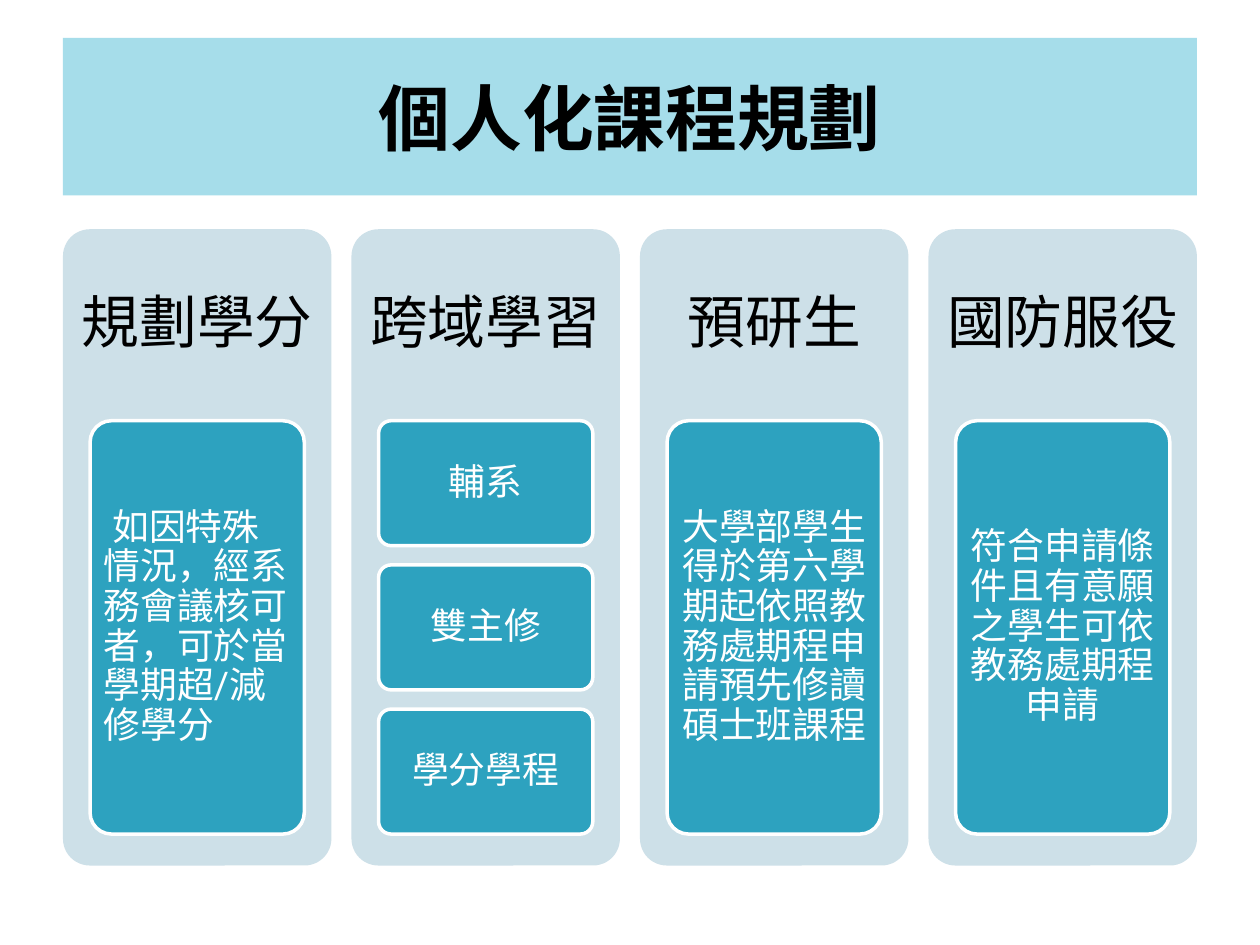
import pptx
import pptx.util
import pptx.dml.color
import pptx.enum.shapes
import pptx.enum.text

Pt = pptx.util.Pt
KIND = pptx.enum.shapes.MSO_SHAPE
ALIGN = pptx.enum.text.PP_ALIGN

LEFT, WIDE = 36, 648
TOP, HIGH = 131, 363.6
COL_W = 153.4
HEAD_H = 109.4
CARD_W, CARD_H = 122.4, 236.2
GAP = 11

COLS = [
    ("規劃學分", ["如因特殊情況，經系務會議核可者，可於當學期超/減修學分"]),
    ("跨域學習", ["輔系", "雙主修", "學分學程"]),
    ("預研生", ["大學部學生得於第六學期起依照教務處期程申請預先修讀碩士班課程"]),
    ("國防服役", ["符合申請條件且有意願之學生可依教務處期程申請"]),
]


def color(code):
    """Turn a hex string into a colour."""
    return pptx.dml.color.RGBColor.from_string(code)


def add_box(slide, kind, area, fill, line=None):
    """Add a filled shape, with an outline if a line colour is given."""
    box = slide.shapes.add_shape(kind, *map(Pt, area))
    box.shadow.inherit = False
    box.fill.solid()
    box.fill.fore_color.rgb = color(fill)
    if line:
        box.line.color.rgb = color(line)
        box.line.width = Pt(2)
    else:
        box.line.fill.background()
    if kind == KIND.ROUNDED_RECTANGLE:
        box.adjustments[0] = 0.1
    return box


def set_text(box, text, size, hue, face, pad, bold=False, space=0.9):
    """Write one centred paragraph into a box and return it."""
    frame = box.text_frame
    frame.word_wrap = True
    frame.vertical_anchor = pptx.enum.text.MSO_ANCHOR.MIDDLE
    frame.margin_left = frame.margin_right = Pt(pad[0])
    frame.margin_top = frame.margin_bottom = Pt(pad[1])
    para = frame.paragraphs[0]
    para.text = text
    para.alignment = ALIGN.CENTER
    para.line_spacing = space
    para.font.size = Pt(size)
    para.font.name = face
    para.font.bold = bold
    para.font.color.rgb = color(hue)
    return para


def add_title(slide, text):
    """Add the title band."""
    band = add_box(slide, KIND.RECTANGLE, (LEFT, 21.6, WIDE, 90), "A6DDEA")
    set_text(band, text, 41, "000000", "Noto Sans Mono", (3.6, 3.6), True, 1.0)


def add_card(slide, area, text):
    """Add a card with white text and return its paragraph."""
    card = add_box(slide, KIND.ROUNDED_RECTANGLE, area, "2DA2BF", "FFFFFF")
    return set_text(card, text, 21, "FFFFFF", "Roboto", (4.2, 3.2))


def add_col(slide, left, head, items):
    """Add a panel with its heading and evenly stacked cards."""
    add_box(slide, KIND.ROUNDED_RECTANGLE, (left, TOP, COL_W, HIGH), "CDE0E8")
    label = slide.shapes.add_textbox(*map(Pt, (left, TOP, COL_W, HEAD_H)))
    set_text(label, head, 33, "000000", "Roboto", (10, 10))
    tall = (CARD_H - GAP * (len(items) - 1)) / len(items)
    inset = (COL_W - CARD_W) / 2
    paras = []
    for row, text in enumerate(items):
        top = TOP + HEAD_H + row * (tall + GAP)
        paras.append(add_card(slide, (left + inset, top, CARD_W, tall), text))
    return paras


def main():
    """Build and save the slide."""
    deck = pptx.Presentation()
    deck.slide_width, deck.slide_height = Pt(720), Pt(540)
    slide = deck.slides.add_slide(deck.slide_layouts[6])
    add_title(slide, "個人化課程規劃")
    step = (WIDE - COL_W) / (len(COLS) - 1)
    cols = [add_col(slide, LEFT + step * num, *col)
            for num, col in enumerate(COLS)]
    first = cols[0][0]
    first.alignment = ALIGN.LEFT
    first._p.get_or_add_pPr().set("indent", str(Pt(5)))
    deck.save("out.pptx")


if __name__ == "__main__":
    main()
